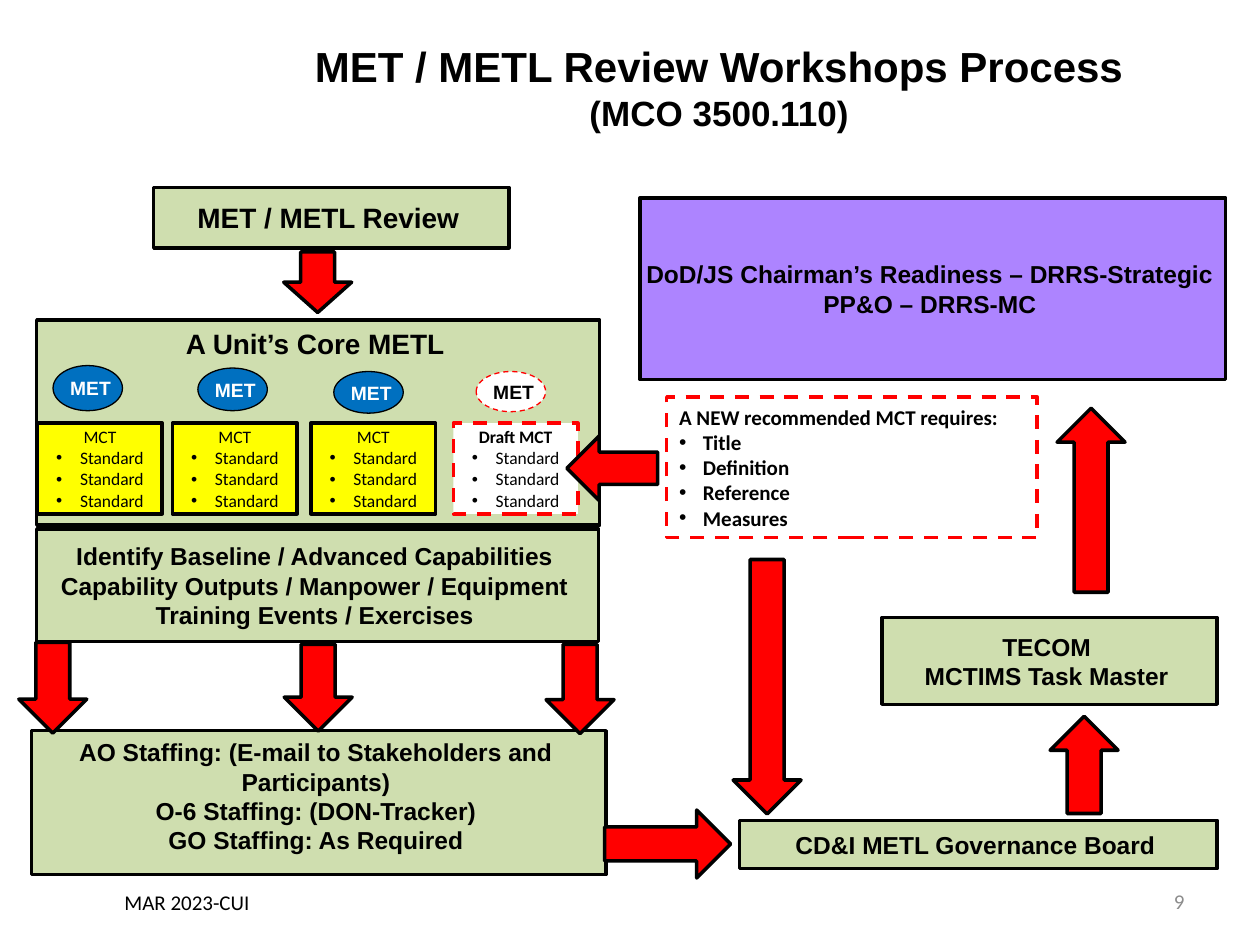
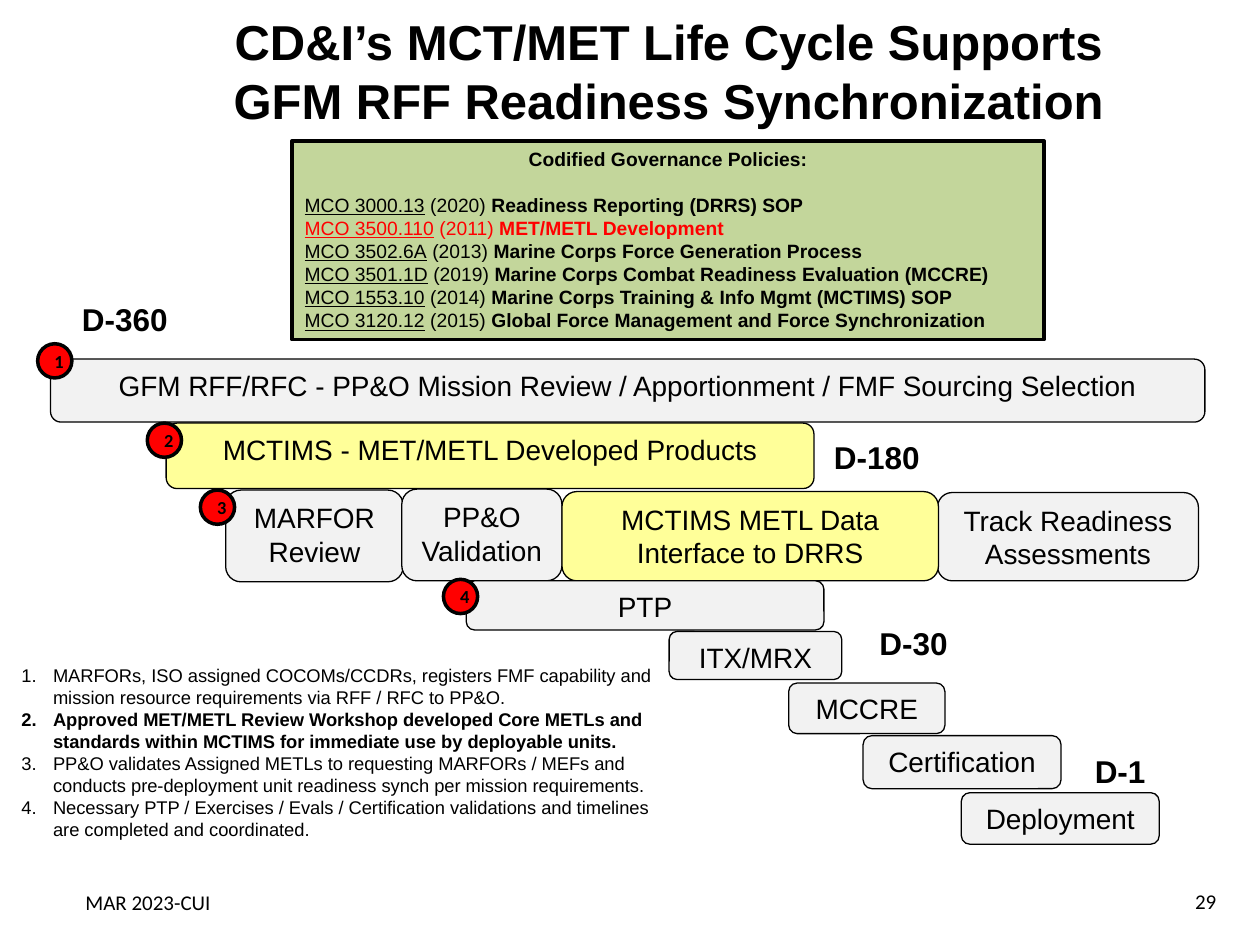
from dataclasses import dataclass, replace
from typing import Any, Optional, Sequence

import lxml.etree
import pptx
import pptx.dml.color
import pptx.enum.dml
import pptx.enum.shapes
import pptx.enum.text
import pptx.oxml.ns
import pptx.util

# Shared colours and names
RGB = pptx.dml.color.RGBColor
BLACK = RGB(0x00, 0x00, 0x00)
WHITE = RGB(0xFF, 0xFF, 0xFF)
RED = RGB(0xFF, 0x00, 0x00)
GREEN = RGB(0xC3, 0xD6, 0x9B)
PURPLE = RGB(0x99, 0x66, 0xFF)
BLUE = RGB(0x00, 0x70, 0xC0)
YELLOW = RGB(0xFF, 0xFF, 0x00)
PALE = RGB(0xFF, 0xFF, 0x99)
LIGHT = RGB(0xF2, 0xF2, 0xF2)
GREY = RGB(0x8C, 0x8C, 0x8C)

KIND = pptx.enum.shapes.MSO_SHAPE
ALIGN = pptx.enum.text.PP_ALIGN
ANCHOR = pptx.enum.text.MSO_ANCHOR


@dataclass(frozen=True)
class Box:
    """Place and size in centimetres."""
    left: float
    top: float
    width: float
    height: float

    def sides(self) -> list[int]:
        return [pptx.util.Cm(n) for n in (self.left, self.top, self.width, self.height)]


@dataclass(frozen=True)
class Look:
    fill: RGB
    line: RGB = BLACK
    weight: float = 2
    dash: bool = False
    alpha: Optional[int] = None


@dataclass(frozen=True)
class Type:
    size: float
    face: str = "Arial"
    bold: bool = False
    color: RGB = BLACK
    align: ALIGN = ALIGN.CENTER


@dataclass(frozen=True)
class Frame:
    """Anchor, wrapping and insets (left, top, right, bottom)."""
    anchor: ANCHOR = ANCHOR.MIDDLE
    wrap: bool = True
    inset: tuple[float, ...] = (0.25, 0.13, 0.25, 0.13)


@dataclass(frozen=True)
class Step:
    """A process box or timeline bar."""
    box: Box
    lines: tuple[str, ...]
    size: float = 14
    fill: RGB = GREEN
    anchor: ANCHOR = ANCHOR.MIDDLE


TOP = Frame(anchor=ANCHOR.TOP)
MID = Frame()
LOOSE = Frame(ANCHOR.TOP, wrap=False)
DASHED = Look(WHITE, RED, dash=True)
NOTE = Type(12, "Calibri")
SMALL = Type(10, "Calibri")


# Drawing helpers
def fit(frame: Any, style: Frame) -> None:
    frame.auto_size = pptx.enum.text.MSO_AUTO_SIZE.NONE
    frame.word_wrap = style.wrap
    frame.vertical_anchor = style.anchor
    sides = ("left", "top", "right", "bottom")
    for side, gap in zip(sides, style.inset):
        setattr(frame, f"margin_{side}", pptx.util.Cm(gap))


def set_type(para: Any, style: Type) -> None:
    para.alignment = style.align
    font = para.font
    font.name, font.bold = style.face, style.bold
    font.size = pptx.util.Pt(style.size)
    font.color.rgb = style.color


def next_para(frame: Any, first: bool) -> Any:
    return frame.paragraphs[0] if first else frame.add_paragraph()


def add_mark(para: Any, indent: float, tag: str, **values: str) -> None:
    props = para._p.get_or_add_pPr()
    step = pptx.util.Cm(indent)
    props.set("marL", str(step))
    props.set("indent", str(-step))
    qn = pptx.oxml.ns.qn
    lxml.etree.SubElement(props, qn("a:buFont"), typeface="Arial")
    lxml.etree.SubElement(props, qn(tag), **values)


def write(frame: Any, lines: Sequence[str], style: Type, bullets: Sequence[str] = (),
          point: Optional[Type] = None) -> None:
    for i, text in enumerate([*lines, *bullets]):
        para = next_para(frame, i == 0)
        para.text = text
        listed = i >= len(lines)
        if listed:
            add_mark(para, 0.48, "a:buChar", char="•")
        set_type(para, point if listed and point else style)


def add_form(slide: Any, kind: KIND, box: Box, look: Look) -> Any:
    form = slide.shapes.add_shape(kind, *box.sides())
    form.shadow.inherit = False
    form.fill.solid()
    form.fill.fore_color.rgb = look.fill
    if look.alpha:
        qn = pptx.oxml.ns.qn
        color = form._element.spPr.find(qn("a:solidFill"))[0]
        lxml.etree.SubElement(color, qn("a:alpha"), val=str(look.alpha * 1000))
    form.line.color.rgb = look.line
    form.line.width = pptx.util.Pt(look.weight)
    if look.dash:
        form.line.dash_style = pptx.enum.dml.MSO_LINE.DASH
    return form


def add_panel(slide: Any, kind: KIND, box: Box, look: Look, frame: Frame,
              lines: Sequence[str], style: Type, bullets: Sequence[str] = (),
              point: Optional[Type] = None) -> None:
    form = add_form(slide, kind, box, look)
    fit(form.text_frame, frame)
    write(form.text_frame, lines, style, bullets, point)


def add_label(slide: Any, box: Box, text: str, style: Type, frame: Frame = MID) -> None:
    label = slide.shapes.add_textbox(*box.sides())
    fit(label.text_frame, frame)
    write(label.text_frame, [text], style)


def move(holder: Any, box: Box) -> None:
    holder.left, holder.top, holder.width, holder.height = box.sides()


def add_title(slide: Any, box: Box, lines: Sequence[str], sizes: Sequence[float],
              frame: Frame) -> None:
    title = slide.shapes.title
    move(title, box)
    fit(title.text_frame, frame)
    for i, (text, size) in enumerate(zip(lines, sizes)):
        para = next_para(title.text_frame, i == 0)
        para.text = text
        set_type(para, Type(size, bold=True))


def add_foot(slide: Any, date: Box, page: Box, number: int, color: RGB) -> None:
    add_label(slide, date, "MAR 2023-CUI", NOTE)
    add_label(slide, page, str(number), replace(NOTE, color=color, align=ALIGN.RIGHT))


# Slide 1: review process
STEPS = [
    Step(Box(0.74, 6.45, 11.35, 4.14), ("A Unit’s Core METL",), 16, anchor=ANCHOR.TOP),
    Step(Box(3.1, 3.78, 7.16, 1.22), ("MET / METL Review",), 16),
    Step(Box(0.74, 10.67, 11.33, 2.26),
         ("Identify Baseline / Advanced Capabilities",
          "Capability Outputs / Manpower / Equipment", "Training Events / Exercises")),
    Step(Box(0.64, 14.73, 11.58, 2.9),
         ("AO Staffing: (E-mail to Stakeholders and", "Participants)",
          "O-6 Staffing: (DON-Tracker)", "GO Staffing: As Required"), anchor=ANCHOR.TOP),
    Step(Box(14.91, 16.54, 9.63, 0.97), ("CD&I METL Governance Board",)),
    Step(Box(17.78, 12.45, 6.76, 1.75), ("TECOM", "MCTIMS Task Master")),
    Step(Box(12.9, 3.99, 11.81, 3.66),
         ("DoD/JS Chairman’s Readiness – DRRS-Strategic", "PP&O – DRRS-MC"), fill=PURPLE),
]
ARROWS = [
    (KIND.LEFT_ARROW, Box(11.43, 8.79, 1.83, 1.3)),
    (KIND.RIGHT_ARROW, Box(12.19, 16.33, 2.54, 1.37)),
    (KIND.DOWN_ARROW, Box(5.72, 5.08, 1.37, 1.22)),
    (KIND.DOWN_ARROW, Box(0.38, 12.95, 1.37, 1.83)),
    (KIND.DOWN_ARROW, Box(5.73, 12.99, 1.37, 1.75)),
    (KIND.DOWN_ARROW, Box(11.01, 12.99, 1.37, 1.8)),
    (KIND.DOWN_ARROW, Box(14.78, 11.28, 1.37, 5.13)),
    (KIND.UP_ARROW, Box(21.17, 14.44, 1.37, 1.96)),
    (KIND.UP_ARROW, Box(21.31, 8.23, 1.37, 3.71)),
]
# Each task: left of oval, top and height of oval, left of card
TASKS = [(1.07, 7.37, 0.91, 0.76), (3.99, 7.42, 0.86, 3.48),
         (6.73, 7.49, 0.84, 6.27), (9.6, 7.49, 0.81, 9.14)]


def draw_process(slide: Any) -> None:
    add_title(slide, Box(3.99, 0.69, 21.01, 2.13),
              ["MET / METL Review Workshops Process", "(MCO 3500.110)"], [24, 20], TOP)
    for step in STEPS:
        add_panel(slide, KIND.RECTANGLE, step.box, Look(step.fill, alpha=80),
                  Frame(step.anchor, False, (0.13, 0.13, 0.25, 0.13)),
                  step.lines, Type(step.size, bold=True))

    # Tasks of the unit; the last one is a draft
    for i, (left, top, height, card) in enumerate(TASKS):
        draft = i == len(TASKS) - 1
        oval = replace(DASHED, weight=0.75) if draft else Look(BLUE, weight=0.75)
        add_panel(slide, KIND.OVAL, Box(left, top, 1.4, height), oval,
                  Frame(inset=(0.11, 0, 0, 0)), ["MET"],
                  Type(11, bold=True, color=BLACK if draft else WHITE))
        add_panel(slide, KIND.RECTANGLE, Box(card, 8.53, 2.51, 1.83),
                  DASHED if draft else Look(YELLOW), MID,
                  ["Draft MCT" if draft else "MCT"], replace(SMALL, bold=draft),
                  ["Standard"] * 3, SMALL)

    add_panel(slide, KIND.RECTANGLE, Box(13.44, 8, 7.47, 2.84), DASHED, MID,
              ["A NEW recommended MCT requires:"],
              replace(NOTE, bold=True, align=ALIGN.LEFT),
              ["Title", "Definition", "Reference", "Measures"])
    for kind, box in ARROWS:
        add_form(slide, kind, box, Look(RED))
    add_foot(slide, Box(0, 17.68, 7.54, 1.02), Box(18.21, 17.65, 5.92, 1.02), 9, GREY)


# Slide 2: life cycle
BARS = [
    Step(Box(1.02, 7.24, 23.27, 1.27),
         ("GFM RFF/RFC - PP&O Mission Review / Apportionment / FMF Sourcing Selection",),
         fill=LIGHT),
    Step(Box(3.35, 8.53, 13.06, 1.32), ("MCTIMS - MET/METL Developed Products",), fill=PALE),
    Step(Box(4.55, 9.88, 3.58, 1.85), ("MARFOR Review",), fill=LIGHT),
    Step(Box(8.1, 9.86, 3.23, 1.85), ("PP&O Validation",), fill=LIGHT),
    Step(Box(18.9, 9.93, 5.26, 1.78), ("Track Readiness Assessments",), fill=LIGHT),
    Step(Box(11.33, 9.91, 7.59, 1.8), ("MCTIMS METL Data Interface to DRRS",), fill=PALE),
    Step(Box(9.4, 11.71, 7.21, 0.99), ("PTP",), fill=LIGHT),
    Step(Box(13.49, 12.73, 3.48, 0.97), ("ITX/MRX",), fill=LIGHT),
    Step(Box(15.9, 13.77, 3.15, 1.02), ("MCCRE",), fill=LIGHT),
    Step(Box(17.4, 14.83, 3.99, 1.07), ("Certification",), fill=LIGHT),
    Step(Box(19.38, 15.98, 3.99, 1.04), ("Deployment",), fill=LIGHT),
]
BADGES = [(0.76, 6.93), (2.97, 8.53), (4.04, 9.88), (8.94, 11.68)]
DAYS = [("D-360", Box(1.4, 5.92, 2.26, 1.02)), ("D-180", Box(16.56, 8.71, 2.26, 1.02)),
        ("D-30", Box(17.48, 12.45, 1.91, 1.02)), ("D-1", Box(21.82, 15.04, 1.55, 1.02))]
ORDERS = [
    ("MCO 3000.13", 2020, "Readiness Reporting (DRRS) SOP"),
    ("MCO 3500.110", 2011, "MET/METL Development"),
    ("MCO 3502.6A", 2013, "Marine Corps Force Generation Process"),
    ("MCO 3501.1D", 2019, "Marine Corps Combat Readiness Evaluation (MCCRE)"),
    ("MCO 1553.10", 2014, "Marine Corps Training & Info Mgmt (MCTIMS) SOP"),
    ("MCO 3120.12", 2015, "Global Force Management and Force Synchronization"),
]
KEY_ORDER = "MCO 3500.110"
NOTES = [
    "MARFORs, ISO assigned COCOMs/CCDRs, registers FMF capability and mission resource "
    "requirements via RFF / RFC to PP&O.",
    "Approved MET/METL Review Workshop developed Core METLs and standards within MCTIMS "
    "for immediate use by deployable units.",
    "PP&O validates Assigned METLs to requesting MARFORs / MEFs and conducts "
    "pre-deployment unit readiness synch per mission requirements.",
    "Necessary PTP / Exercises / Evals / Certification validations and timelines are "
    "completed and coordinated.",
]


def draw_orders(slide: Any) -> None:
    form = add_form(slide, KIND.RECTANGLE, Box(5.89, 2.84, 15.16, 4.01), Look(GREEN))
    frame = form.text_frame
    fit(frame, TOP)
    write(frame, ["Codified Governance Policies:"], Type(11, bold=True))
    frame.paragraphs[0].space_after = pptx.util.Pt(13)
    for code, year, name in ORDERS:
        para = frame.add_paragraph()
        color = RED if code == KEY_ORDER else BLACK
        set_type(para, Type(11, color=color, align=ALIGN.LEFT))
        for text in (code, f" ({year}) ", name):
            run = para.add_run()
            run.text = text
            if text == code:
                run.font.underline = True
            elif text == name:
                run.font.bold = True


def draw_notes(slide: Any) -> None:
    body = slide.placeholders[1]
    move(body, Box(0.18, 13.26, 13.31, 3.84))
    fit(body.text_frame, TOP)
    for i, text in enumerate(NOTES):
        para = next_para(body.text_frame, i == 0)
        para.text = text
        para.space_before = pptx.util.Pt(0)
        add_mark(para, 0.64, "a:buAutoNum", type="arabicPeriod")
        set_type(para, Type(10.5, bold=i == 1, align=ALIGN.LEFT))


def draw_cycle(slide: Any) -> None:
    add_title(slide, Box(2.67, 0, 21.62, 2.84),
              ["CD&I’s MCT/MET Life Cycle Supports", "GFM RFF Readiness Synchronization"],
              [28, 28], MID)
    draw_orders(slide)
    draw_notes(slide)
    for bar in BARS:
        add_panel(slide, KIND.ROUNDED_RECTANGLE, bar.box, Look(bar.fill, weight=0.75),
                  TOP, bar.lines, Type(16))
    for i, (left, top) in enumerate(BADGES, 1):
        add_panel(slide, KIND.FLOWCHART_CONNECTOR, Box(left, top, 0.69, 0.69), Look(RED),
                  MID, [str(i)], Type(10.5, "Calibri", bold=True))
    for text, box in DAYS:
        add_label(slide, box, text, Type(18, bold=True, align=ALIGN.LEFT), LOOSE)
    add_foot(slide, Box(0.46, 17.68, 5.05, 1.02), Box(18.85, 17.65, 5.92, 1.02), 29, BLACK)


def main() -> None:
    deck = pptx.Presentation()
    deck.slide_width, deck.slide_height = pptx.util.Cm(25.4), pptx.util.Cm(19.05)
    for layout, draw in ((5, draw_process), (1, draw_cycle)):
        draw(deck.slides.add_slide(deck.slide_layouts[layout]))
    deck.save("out.pptx")


if __name__ == "__main__":
    main()
